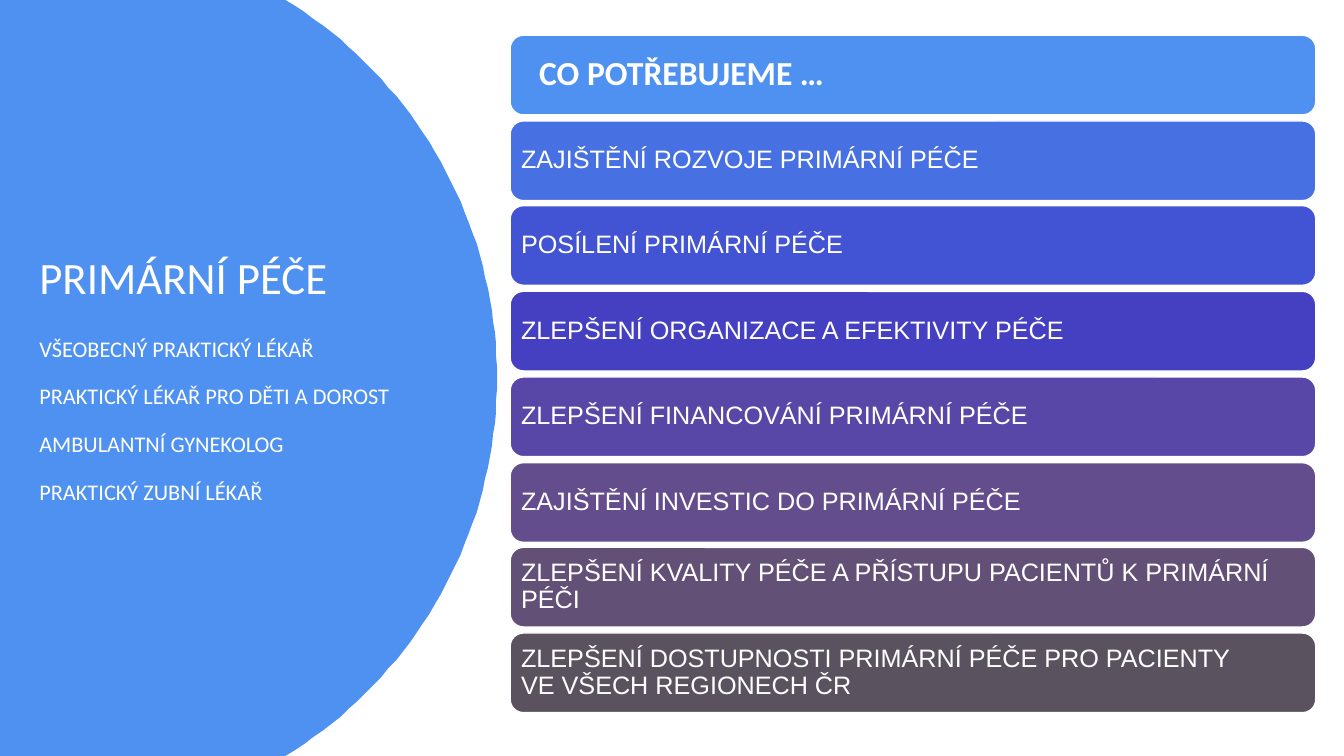
import math

from lxml import etree
from pptx import Presentation
from pptx import util as u
from pptx.dml.color import RGBColor
from pptx.enum import shapes, text
from pptx.oxml.ns import qn

PX = 9144  # EMU in one px, 100 px to the inch
WIDTH, HEIGHT = 1333, 750

WHITE = RGBColor(0xFF, 0xFF, 0xFF)
SKY = RGBColor(0x4E, 0x91, 0xF0)

# Circle whose right part bounds the blue panel
CENTRE_X, CENTRE_Y, RADIUS = 53, 375, 440
ARC_STEPS = 80

# Column of bars
BAR_LEFT, BAR_WIDTH, BAR_HEIGHT = 506, 799, 79
FIRST_TOP, LAST_TOP = 35, 628

HEADING = "CO POTŘEBUJEME …"
NEEDS = [
    ("ZAJIŠTĚNÍ ROZVOJE PRIMÁRNÍ PÉČE", RGBColor(0x47, 0x70, 0xE3)),
    ("POSÍLENÍ PRIMÁRNÍ PÉČE", RGBColor(0x42, 0x53, 0xD4)),
    ("ZLEPŠENÍ ORGANIZACE A EFEKTIVITY PÉČE", RGBColor(0x45, 0x40, 0xC2)),
    ("ZLEPŠENÍ FINANCOVÁNÍ PRIMÁRNÍ PÉČE", RGBColor(0x59, 0x47, 0xA7)),
    ("ZAJIŠTĚNÍ INVESTIC DO PRIMÁRNÍ PÉČE", RGBColor(0x63, 0x4D, 0x8D)),
    ("ZLEPŠENÍ KVALITY PÉČE A PŘÍSTUPU PACIENTŮ K PRIMÁRNÍ PÉČI",
     RGBColor(0x63, 0x50, 0x76)),
    ("ZLEPŠENÍ DOSTUPNOSTI PRIMÁRNÍ PÉČE PRO PACIENTY\vVE VŠECH REGIONECH ČR",
     RGBColor(0x5B, 0x52, 0x60)),
]
DOCTORS = [
    "VŠEOBECNÝ PRAKTICKÝ LÉKAŘ",
    "PRAKTICKÝ LÉKAŘ PRO DĚTI A DOROST",
    "AMBULANTNÍ GYNEKOLOG",
    "PRAKTICKÝ ZUBNÍ LÉKAŘ",
]


def px(*lengths):
    return [u.Emu(length * PX) for length in lengths]


def format_paragraph(paragraph, font_name, size, bold=False):
    paragraph.alignment = text.PP_ALIGN.LEFT
    paragraph.line_spacing = 0.9
    font = paragraph.font
    font.name, font.size, font.bold = font_name, u.Pt(size), bold
    font.color.rgb = WHITE


def place(placeholder, left, top, width, height, anchor):
    placeholder.left, placeholder.top, placeholder.width, placeholder.height = px(
        left, top, width, height)
    frame = placeholder.text_frame
    frame.auto_size = text.MSO_AUTO_SIZE.NONE
    frame.vertical_anchor = anchor
    return frame


def add_panel(slide):
    angles = [math.asin(CENTRE_Y / RADIUS) * (2 * i / ARC_STEPS - 1)
              for i in range(ARC_STEPS + 1)]
    arc = [(CENTRE_X + RADIUS * math.cos(a), CENTRE_Y + RADIUS * math.sin(a))
           for a in angles]
    builder = slide.shapes.build_freeform(0, 0, scale=PX)
    builder.add_line_segments(arc + [(0, HEIGHT)], close=True)
    panel = builder.convert_to_shape()
    panel.shadow.inherit = False
    panel.fill.solid()
    panel.fill.fore_color.rgb = SKY
    panel.line.fill.background()
    # Behind the placeholders
    slide.shapes.element.insert(2, panel.element)


def fill_title(slide):
    frame = place(slide.shapes.title, 29, 243, 465, 70, text.MSO_ANCHOR.MIDDLE)
    frame.text = "PRIMÁRNÍ PÉČE"
    format_paragraph(frame.paragraphs[0], "Calibri", 32)


def fill_doctors(slide):
    frame = place(slide.placeholders[1], 29, 330, 465, 190, text.MSO_ANCHOR.TOP)
    frame.text = "\n".join(DOCTORS)
    for i, paragraph in enumerate(frame.paragraphs):
        properties = paragraph._p.get_or_add_pPr()
        properties.set("marL", "0")
        properties.set("indent", "0")
        etree.SubElement(properties, qn("a:buNone"))
        paragraph.space_before = u.Pt(17 if i else 0)
        format_paragraph(paragraph, "Calibri", 16)


def add_bar(slide, top, label, colour, font_name="Arial", size=18, bold=False,
            indent=7):
    bar = slide.shapes.add_shape(shapes.MSO_SHAPE.ROUNDED_RECTANGLE,
                                 *px(BAR_LEFT, top, BAR_WIDTH, BAR_HEIGHT))
    bar.shadow.inherit = False
    bar.fill.solid()
    bar.fill.fore_color.rgb = colour
    bar.line.color.rgb = WHITE
    bar.line.width = u.Pt(1)
    frame = bar.text_frame
    frame.word_wrap = True
    frame.vertical_anchor = text.MSO_ANCHOR.MIDDLE
    frame.margin_left, frame.margin_right = px(indent, 7)
    frame.margin_top, frame.margin_bottom = px(7, 7)
    frame.text = label
    format_paragraph(frame.paragraphs[0], font_name, size, bold)


def main():
    deck = Presentation()
    deck.slide_width, deck.slide_height = px(WIDTH, HEIGHT)
    slide = deck.slides.add_slide(deck.slide_layouts[1])

    # Left: primary care and its doctors
    add_panel(slide)
    fill_title(slide)
    fill_doctors(slide)

    # Right: heading bar and the needs below it
    add_bar(slide, FIRST_TOP, HEADING, SKY, "Calibri", 24, True, indent=25)
    for i, (need, colour) in enumerate(NEEDS, start=1):
        top = FIRST_TOP + round((LAST_TOP - FIRST_TOP) * i / len(NEEDS))
        add_bar(slide, top, need, colour)

    deck.save("out.pptx")


if __name__ == "__main__":
    main()
